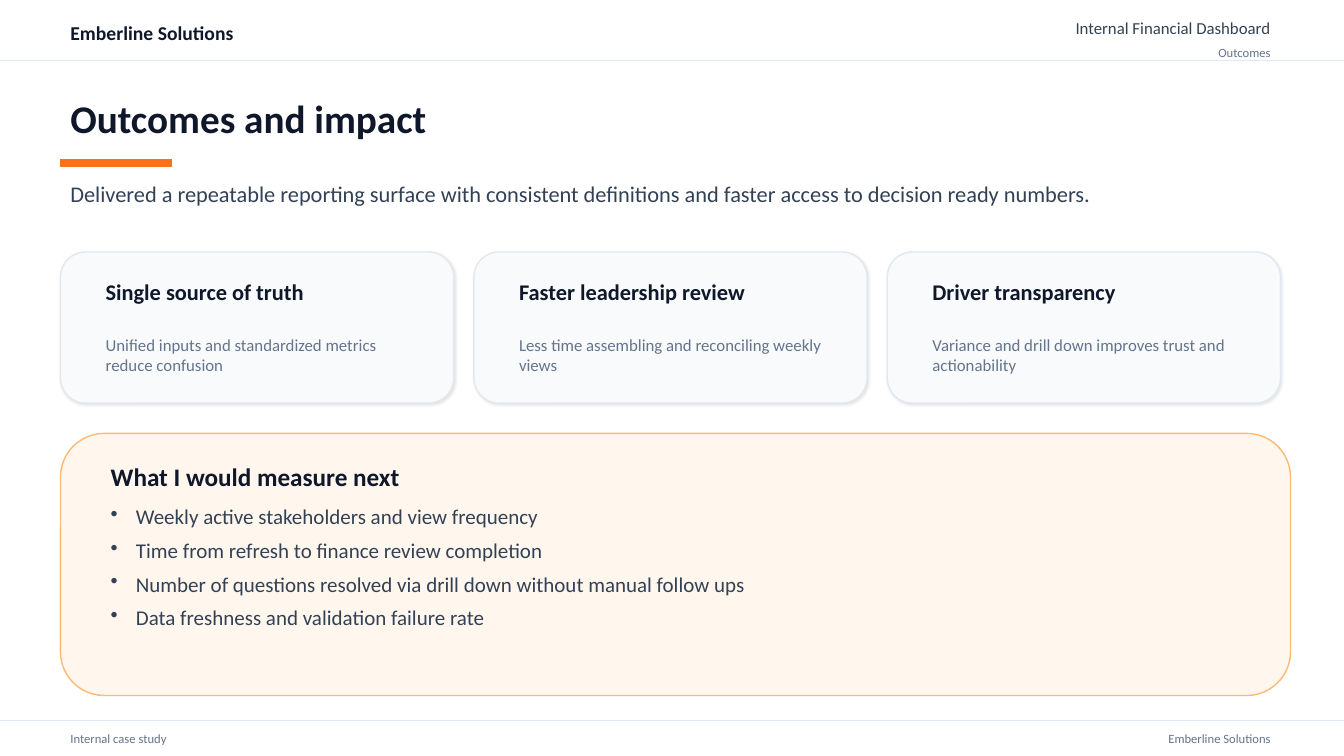
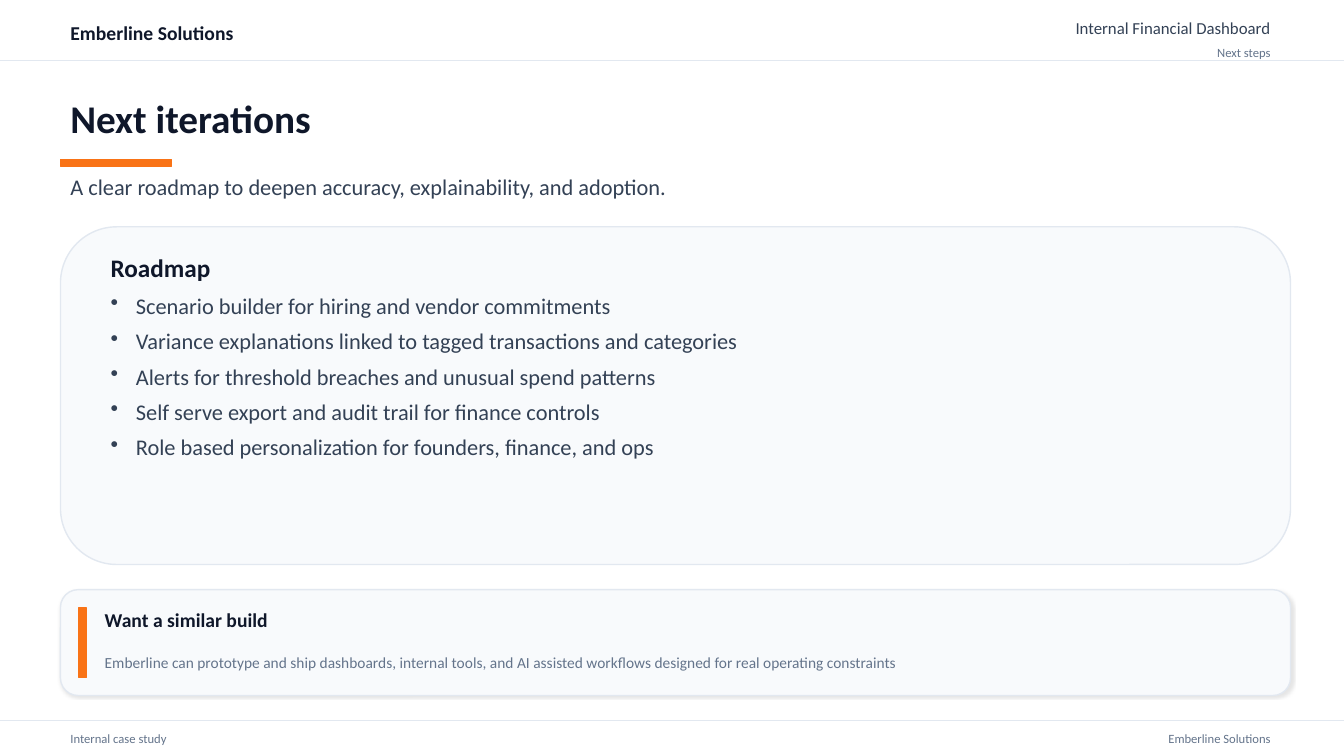
from lxml.etree import SubElement
from pptx import Presentation
from pptx.dml.color import RGBColor
from pptx.enum.shapes import MSO_CONNECTOR, MSO_SHAPE
from pptx.enum.text import MSO_ANCHOR, PP_ALIGN
from pptx.oxml.ns import qn
from pptx.util import Pt

# Scale: 100 px to the inch
PX = 9144
WIDTH, HEIGHT = 1333, 750
LEFT, CONTENT_WIDTH = 60, 1220

WHITE = RGBColor(0xFF, 0xFF, 0xFF)
INK = RGBColor(0x0F, 0x17, 0x2A)
BODY = RGBColor(0x33, 0x41, 0x55)
MUTED = RGBColor(0x64, 0x74, 0x8B)
RULE = RGBColor(0xE2, 0xE8, 0xF0)
PANEL = RGBColor(0xF8, 0xFA, 0xFC)
ORANGE = RGBColor(0xF9, 0x73, 0x16)
CREAM = RGBColor(0xFF, 0xF7, 0xED)
PEACH = RGBColor(0xFD, 0xBA, 0x74)

FONT = "Calibri"
COMPANY = "Emberline Solutions"


class Deck:
    """Holds the shared style and the current page."""

    formats = {
        "brand": {"size": Pt(14), "bold": True, "color": INK},
        "project": {"size": Pt(12), "color": BODY},
        "small": {"size": Pt(9), "color": MUTED},
        "title": {"size": Pt(28), "bold": True, "color": INK},
        "lead": {"size": Pt(16), "color": BODY},
        "panel title": {"size": Pt(18), "bold": True, "color": INK},
        "card title": {"size": Pt(16), "bold": True, "color": INK},
        "card text": {"size": Pt(12), "color": MUTED},
        "bullet": {"size": Pt(15), "color": BODY},
        "large bullet": {"size": Pt(16), "color": BODY},
        "call title": {"size": Pt(14), "bold": True, "color": INK},
        "call text": {"size": Pt(11), "color": MUTED},
    }

    def __init__(self):
        self.deck = Presentation()
        self.deck.slide_width = WIDTH * PX
        self.deck.slide_height = HEIGHT * PX
        self.page = None

    def add_page(self, section, title, lead, lead_height):
        self.page = self.deck.slides.add_slide(self.deck.slide_layouts[6])
        background = self.page.background.fill
        background.solid()
        background.fore_color.rgb = WHITE
        # Header
        self.rule(60)
        self.text(LEFT, 17, 600, 30, COMPANY, "brand")
        self.text(710, 17, 560, 22, "Internal Financial Dashboard", "project", PP_ALIGN.RIGHT)
        self.text(710, 42, 560, 20, section, "small", PP_ALIGN.RIGHT)
        # Title and lead
        self.text(LEFT, 95, CONTENT_WIDTH, 44, title, "title")
        self.accent(LEFT, 158, 110, 7)
        self.text(LEFT, 165, CONTENT_WIDTH, lead_height, lead, "lead")
        # Footer
        self.rule(715)
        self.text(LEFT, 723, 600, 20, "Internal case study", "small")
        self.text(710, 723, 560, 20, COMPANY, "small", PP_ALIGN.RIGHT)

    def rule(self, top):
        line = self.page.shapes.add_connector(
            MSO_CONNECTOR.STRAIGHT, 0, top * PX, WIDTH * PX, top * PX)
        line.line.color.rgb = RULE
        line.line.width = Pt(1)
        SubElement(line._element.spPr, qn("a:effectLst"))

    def shape(self, kind, left, top, width, height, fill, outline):
        shape = self.page.shapes.add_shape(
            kind, left * PX, top * PX, width * PX, height * PX)
        shape.shadow.inherit = False
        shape.fill.solid()
        shape.fill.fore_color.rgb = fill
        shape.line.color.rgb = outline
        shape.line.width = Pt(1)
        return shape

    def accent(self, left, top, width, height):
        self.shape(MSO_SHAPE.RECTANGLE, left, top, width, height, ORANGE, ORANGE)

    def panel(self, left, top, width, height, fill=PANEL, outline=RULE):
        return self.shape(MSO_SHAPE.ROUNDED_RECTANGLE, left, top, width, height, fill, outline)

    def raised_panel(self, left, top, width, height):
        panel = self.panel(left, top, width, height)
        effects = panel._element.spPr.find(qn("a:effectLst"))
        shadow = SubElement(effects, qn("a:outerShdw"), blurRad=str(Pt(2)),
                            dist=str(Pt(1)), dir="2700000", algn="bl", rotWithShape="0")
        color = SubElement(shadow, qn("a:srgbClr"), val="000000")
        SubElement(color, qn("a:alpha"), val="10000")

    def frame(self, left, top, width, height, anchor):
        box = self.page.shapes.add_textbox(left * PX, top * PX, width * PX, height * PX)
        box.text_frame.word_wrap = True
        box.text_frame.vertical_anchor = anchor
        return box.text_frame

    def span(self, para, words, style):
        span = para.add_run()
        span.text = words
        span.font.name = FONT
        for name, value in self.formats[style].items():
            if name == "color":
                span.font.color.rgb = value
            else:
                setattr(span.font, name, value)

    def text(self, left, top, width, height, words, style, align=PP_ALIGN.LEFT):
        para = self.frame(left, top, width, height, MSO_ANCHOR.MIDDLE).paragraphs[0]
        para.alignment = align
        self.span(para, words, style)

    def bullets(self, left, top, width, height, items, style):
        frame = self.frame(left, top, width, height, MSO_ANCHOR.TOP)
        for index, item in enumerate(items):
            para = frame.add_paragraph() if index else frame.paragraphs[0]
            para.space_after = Pt(6)
            properties = para._p.get_or_add_pPr()
            properties.set("marL", str(25 * PX))
            properties.set("indent", str(-25 * PX))
            SubElement(properties, qn("a:buChar"), char="•")
            self.span(para, item, style)

    def card(self, left, top, title, words):
        self.raised_panel(left, top, 390, 150)
        self.text(left + 35, top + 22, 330, 35, title, "card title")
        self.text(left + 35, top + 62, 330, 80, words, "card text")


def add_outcomes(deck):
    deck.add_page(
        "Outcomes", "Outcomes and impact",
        "Delivered a repeatable reporting surface with consistent definitions "
        "and faster access to decision ready numbers.", 55)

    # Outcome cards
    cards = [
        ("Single source of truth", "Unified inputs and standardized metrics reduce confusion"),
        ("Faster leadership review", "Less time assembling and reconciling weekly views"),
        ("Driver transparency", "Variance and drill down improves trust and actionability"),
    ]
    for column, (title, words) in enumerate(cards):
        deck.card(LEFT + column * 410, 250, title, words)

    # Measures
    deck.panel(LEFT, 430, CONTENT_WIDTH, 260, CREAM, PEACH)
    deck.text(100, 455, 1140, 35, "What I would measure next", "panel title")
    deck.bullets(100, 495, 1160, 140, [
        "Weekly active stakeholders and view frequency",
        "Time from refresh to finance review completion",
        "Number of questions resolved via drill down without manual follow ups",
        "Data freshness and validation failure rate",
    ], "bullet")


def add_next_steps(deck):
    deck.add_page(
        "Next steps", "Next iterations",
        "A clear roadmap to deepen accuracy, explainability, and adoption.", 40)

    # Roadmap
    deck.panel(LEFT, 225, CONTENT_WIDTH, 335)
    deck.text(100, 250, 1140, 30, "Roadmap", "panel title")
    deck.bullets(100, 285, 1160, 173, [
        "Scenario builder for hiring and vendor commitments",
        "Variance explanations linked to tagged transactions and categories",
        "Alerts for threshold breaches and unusual spend patterns",
        "Self serve export and audit trail for finance controls",
        "Role based personalization for founders, finance, and ops",
    ], "large bullet")

    # Call to action
    deck.raised_panel(LEFT, 585, CONTENT_WIDTH, 105)
    deck.accent(78, 603, 8, 69)
    deck.text(94, 601, 1170, 28, "Want a similar build", "call title")
    deck.text(94, 631, 1170, 52,
              "Emberline can prototype and ship dashboards, internal tools, and AI assisted "
              "workflows designed for real operating constraints", "call text")


def main():
    deck = Deck()
    add_outcomes(deck)
    add_next_steps(deck)
    deck.deck.save("out.pptx")


if __name__ == "__main__":
    main()
